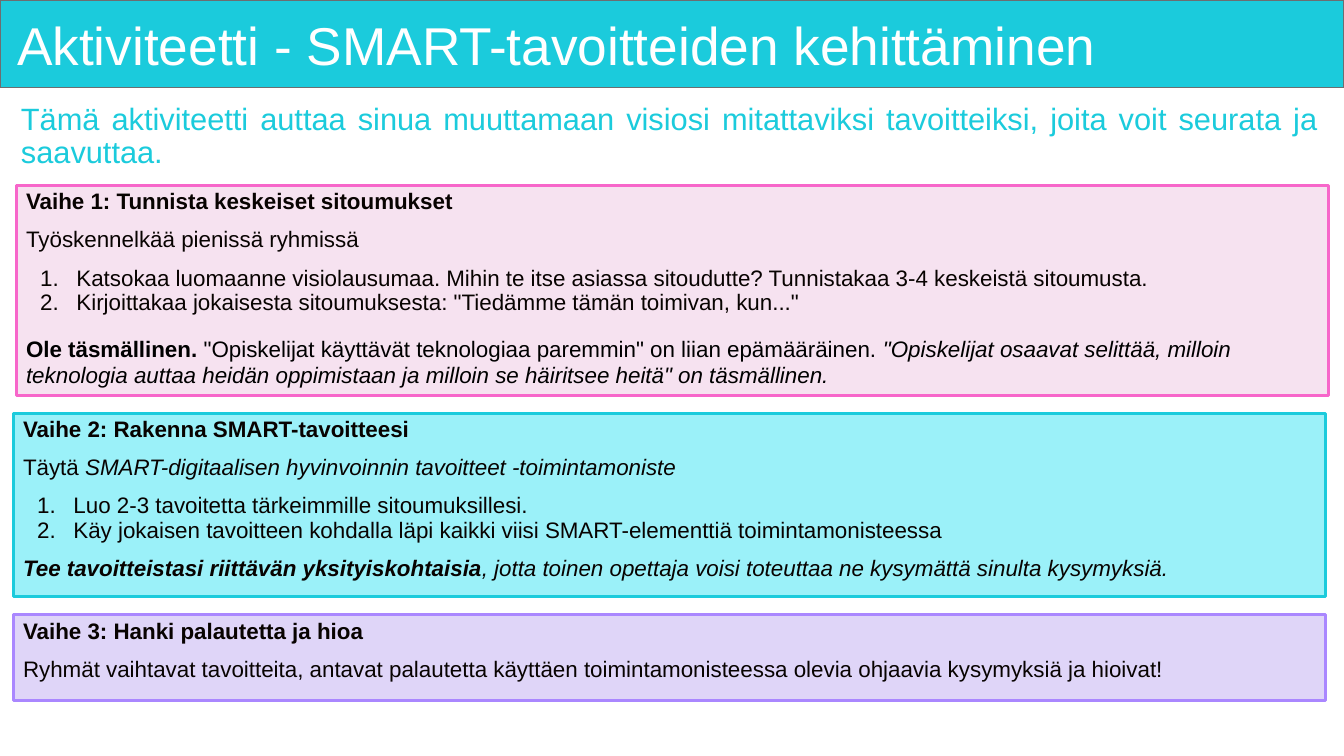
"""Build the slide on developing SMART goals."""
from lxml.etree import SubElement
from pptx import Presentation
from pptx.dml.color import RGBColor
from pptx.enum.shapes import MSO_SHAPE as Shape
from pptx.enum.text import MSO_ANCHOR as Anchor, PP_ALIGN as Align
from pptx.oxml.ns import qn
from pptx.util import Inches, Pt

COLORS = {
    "white": "FFFFFF", "ink": "080301", "black": "000000",
    "cyan": "1BCBDC", "grey": "6C6E70", "pale_cyan": "9BF1F9",
    "pink": "F766CA", "pale_pink": "F6E2F0",
    "violet": "AA87FF", "pale_violet": "DFD5F8",
}


def rgb(name):
    """Return the named colour."""
    return RGBColor.from_string(COLORS[name])


def style_run(run, size, color, style=""):
    """Format a run; style holds b for bold and i for italic."""
    font = run.font
    font.name, font.size = "Arial", Pt(size)
    font.color.rgb = rgb(color)
    font.bold, font.italic = "b" in style, "i" in style


def add_panel(slide, box, fill, line, width):
    """Add a filled and outlined rectangle."""
    panel = slide.shapes.add_shape(Shape.RECTANGLE, *map(Inches, box))
    panel.shadow.inherit = False
    panel.fill.solid()
    panel.fill.fore_color.rgb = rgb(fill)
    panel.line.color.rgb = rgb(line)
    panel.line.width = Pt(width)
    return panel


def add_line_of_text(slide, box, text, size, color, inset, align):
    """Add a vertically centred text box with one paragraph."""
    frame = slide.shapes.add_textbox(*map(Inches, box)).text_frame
    frame.word_wrap = True
    frame.vertical_anchor = Anchor.MIDDLE
    frame.margin_left = frame.margin_right = Inches(inset)
    frame.text = text
    paragraph = frame.paragraphs[0]
    paragraph.alignment, paragraph.line_spacing = align, 0.9
    style_run(paragraph.runs[0], size, color)


def number_paragraph(paragraph):
    """Give a paragraph automatic numbering and a hanging indent."""
    props = paragraph._p.get_or_add_pPr()
    props.set("marL", str(Inches(0.5)))
    props.set("indent", str(Inches(-0.36)))
    SubElement(props, qn("a:buFont"), typeface="Arial")
    SubElement(props, qn("a:buAutoNum"), type="arabicPeriod")


def add_step(slide, box, fill, line, paragraphs):
    """Add a step panel from (runs, numbered, before, spacing, color) rows."""
    frame = add_panel(slide, box, fill, line, 2.25).text_frame
    frame.word_wrap = True
    frame.vertical_anchor = Anchor.TOP
    for index, (runs, numbered, before, spacing, color) in enumerate(paragraphs):
        paragraph = frame.add_paragraph() if index else frame.paragraphs[0]
        if numbered:
            number_paragraph(paragraph)
        paragraph.alignment = Align.LEFT
        paragraph.line_spacing = spacing
        paragraph.space_before = Pt(before if index else 0)
        for text, style in runs:
            run = paragraph.add_run()
            run.text = text
            style_run(run, 16, color, style)


def plain(*runs):
    """Describe a paragraph without a number."""
    return runs, False, 10, 0.9, "ink"


def numbered_list(*items):
    """Describe numbered paragraphs, with a gap before the first only."""
    return [([(item, "")], True, 0 if index else 10, 0.9, "ink")
            for index, item in enumerate(items)]


def main():
    """Build and save the slide."""
    deck = Presentation()
    deck.slide_width, deck.slide_height = Inches(13.33), Inches(7.5)
    slide = deck.slides.add_slide(deck.slide_layouts[6])

    add_panel(slide, (0, 0, 13.33, 0.87), "cyan", "grey", 1)
    add_line_of_text(slide, (0.11, 0.09, 13.06, 0.78),
                     "Aktiviteetti - SMART-tavoitteiden kehittäminen",
                     38, "white", 0.06, Align.LEFT)
    add_line_of_text(slide, (0.11, 0.88, 13.06, 0.96),
                     "Tämä aktiviteetti auttaa sinua muuttamaan visiosi mitattaviksi "
                     "tavoitteiksi, joita voit seurata ja saavuttaa.",
                     22, "cyan", 0.1, Align.JUSTIFY)

    be_precise = [
        ("Ole täsmällinen. ", "b"),
        ('"Opiskelijat käyttävät teknologiaa paremmin" on liian epämääräinen. ', ""),
        ('"Opiskelijat osaavat selittää, milloin teknologia auttaa heidän '
         'oppimistaan ja milloin se häiritsee heitä" on täsmällinen.', "i"),
    ]
    add_step(slide, (0.16, 1.84, 13.02, 2.08), "pale_pink", "pink", [
        plain(("Vaihe 1: Tunnista keskeiset sitoumukset", "b")),
        plain(("Työskennelkää pienissä ryhmissä", "")),
        *numbered_list(
            "Katsokaa luomaanne visiolausumaa. Mihin te itse asiassa sitoudutte? "
            "Tunnistakaa 3-4 keskeistä sitoumusta.",
            'Kirjoittakaa jokaisesta sitoumuksesta: "Tiedämme tämän toimivan, kun..."'),
        (be_precise, False, 14, 1.0, "black"),
    ])
    add_step(slide, (0.13, 4.1, 13.02, 1.82), "pale_cyan", "cyan", [
        plain(("Vaihe 2: Rakenna SMART-tavoitteesi", "b")),
        plain(("Täytä ", ""),
              ("SMART-digitaalisen hyvinvoinnin tavoitteet -toimintamoniste", "i")),
        *numbered_list(
            "Luo 2-3 tavoitetta tärkeimmille sitoumuksillesi.",
            "Käy jokaisen tavoitteen kohdalla läpi kaikki viisi SMART-elementtiä "
            "toimintamonisteessa"),
        plain(("Tee tavoitteistasi riittävän yksityiskohtaisia", "bi"),
              (", jotta toinen opettaja voisi toteuttaa ne kysymättä sinulta "
               "kysymyksiä.", "i")),
    ])
    add_step(slide, (0.13, 6.1, 13.02, 0.85), "pale_violet", "violet", [
        plain(("Vaihe 3: Hanki palautetta ja hioa", "b")),
        plain(("Ryhmät vaihtavat tavoitteita, antavat palautetta käyttäen "
               "toimintamonisteessa olevia ohjaavia kysymyksiä ja hioivat!", "")),
    ])
    deck.save("out.pptx")


if __name__ == "__main__":
    main()
